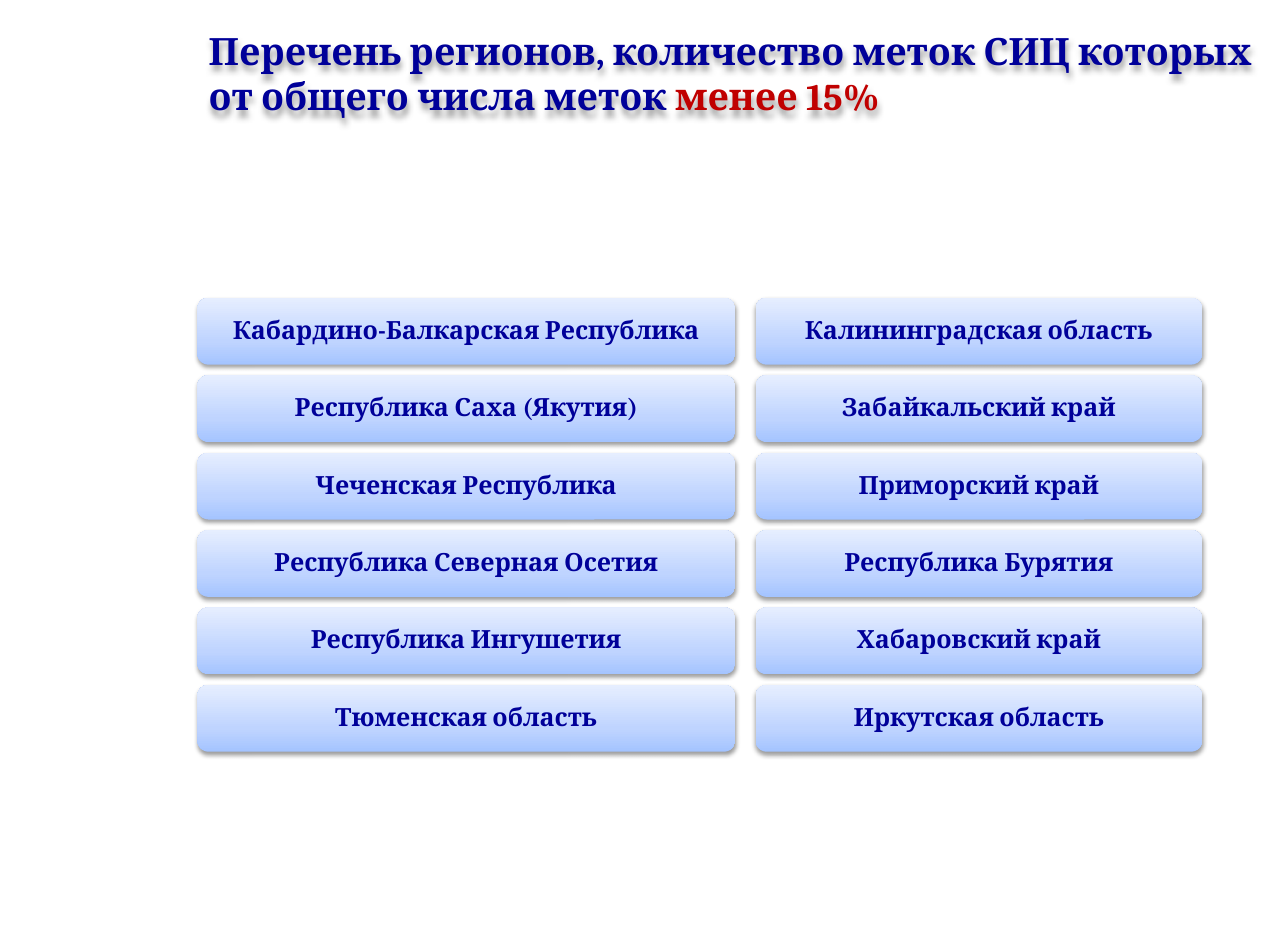
from pptx import Presentation
from pptx.dml.color import RGBColor
from pptx.enum.shapes import MSO_SHAPE
from pptx.enum.text import MSO_ANCHOR, MSO_AUTO_SIZE, PP_ALIGN
from pptx.oxml import parse_xml
from pptx.oxml.ns import nsdecls
from pptx.util import Pt

ROUND = MSO_SHAPE.ROUNDED_RECTANGLE
MIDDLE = MSO_ANCHOR.MIDDLE
GROW = MSO_AUTO_SIZE.SHAPE_TO_FIT_TEXT
LEFT, CENTER = PP_ALIGN.LEFT, PP_ALIGN.CENTER

TITLE = [
    ("Перечень регионов, количество меток СИЦ которых от общего числа меток ", "blue"),
    ("менее 15%", "red"),
]
COLUMNS = [
    (126, 343.4, [
        "Кабардино-Балкарская Республика",
        "Республика Саха (Якутия)",
        "Чеченская Республика",
        "Республика Северная Осетия",
        "Республика Ингушетия",
        "Тюменская область",
    ]),
    (482.4, 285.1, [
        "Калининградская область",
        "Забайкальский край",
        "Приморский край",
        "Республика Бурятия",
        "Хабаровский край",
        "Иркутская область",
    ]),
]
THEME = {
    "font": "Cambria",
    "head": 24,
    "body": 16,
    "blue": "000099",
    "red": "C00000",
    "shade": "000000",
    "stops": [(0, "A4C4FF"), (35, "BFD4FF"), (100, "E6EEFF")],
}
TOP, PITCH, HIGH = 190.1, 49.4, 42.7


def apply(target, values):
    for name, value in values.items():
        setattr(target, name, value)


def place(shape, left, top, width, height):
    apply(shape, {"left": Pt(left), "top": Pt(top),
                  "width": Pt(width), "height": Pt(height)})


def write(par, text, size, color):
    run = par.add_run()
    run.text = text
    apply(run.font, {"name": THEME["font"], "size": Pt(THEME[size]), "bold": True})
    run.font.color.rgb = RGBColor.from_string(THEME[color])


def shadow(shape, blur, dist):
    shape.shadow.inherit = False
    shape._element.spPr[-1].append(parse_xml(
        f'<a:outerShdw {nsdecls("a")} blurRad="{Pt(blur)}" dist="{Pt(dist)}" '
        f'dir="5400000" rotWithShape="0"><a:srgbClr val="{THEME["shade"]}">'
        '<a:alpha val="38000"/></a:srgbClr></a:outerShdw>'))


def shade(shape):
    stops = "".join(f'<a:gs pos="{pos * 1000}"><a:srgbClr val="{color}"/></a:gs>'
                    for pos, color in THEME["stops"])
    shape._element.spPr.append(parse_xml(
        f'<a:gradFill {nsdecls("a")} rotWithShape="1"><a:gsLst>{stops}</a:gsLst>'
        '<a:lin ang="16200000" scaled="0"/></a:gradFill>'))


def add_title(slide):
    title = slide.shapes.title
    place(title, 126, 14.4, 686.2, 64.8)
    frame = title.text_frame
    apply(frame, {"word_wrap": True, "auto_size": GROW, "vertical_anchor": MIDDLE})
    par = frame.paragraphs[0]
    par.alignment = LEFT
    for text, color in TITLE:
        write(par, text, "head", color)
    shadow(title, 4, 3)


def add_region(slide, text, left, top, width):
    box = slide.shapes.add_shape(ROUND, Pt(left), Pt(top), Pt(width), Pt(HIGH))
    shade(box)
    box.line.fill.background()
    shadow(box, 3.1, 1.6)
    frame = box.text_frame
    apply(frame, {"word_wrap": True, "vertical_anchor": MIDDLE})
    apply(frame, dict.fromkeys(
        ("margin_left", "margin_top", "margin_right", "margin_bottom"), Pt(5)))
    par = frame.paragraphs[0]
    apply(par, {"alignment": CENTER, "line_spacing": 0.9})
    write(par, text, "body", "blue")


def main():
    deck = Presentation()
    apply(deck, {"slide_width": Pt(822.24), "slide_height": Pt(595.44)})
    slide = deck.slides.add_slide(deck.slide_layouts[5])
    add_title(slide)
    for left, width, names in COLUMNS:
        for row, name in enumerate(names):
            add_region(slide, name, left, TOP + row * PITCH, width)
    deck.save("out.pptx")


if __name__ == "__main__":
    main()
